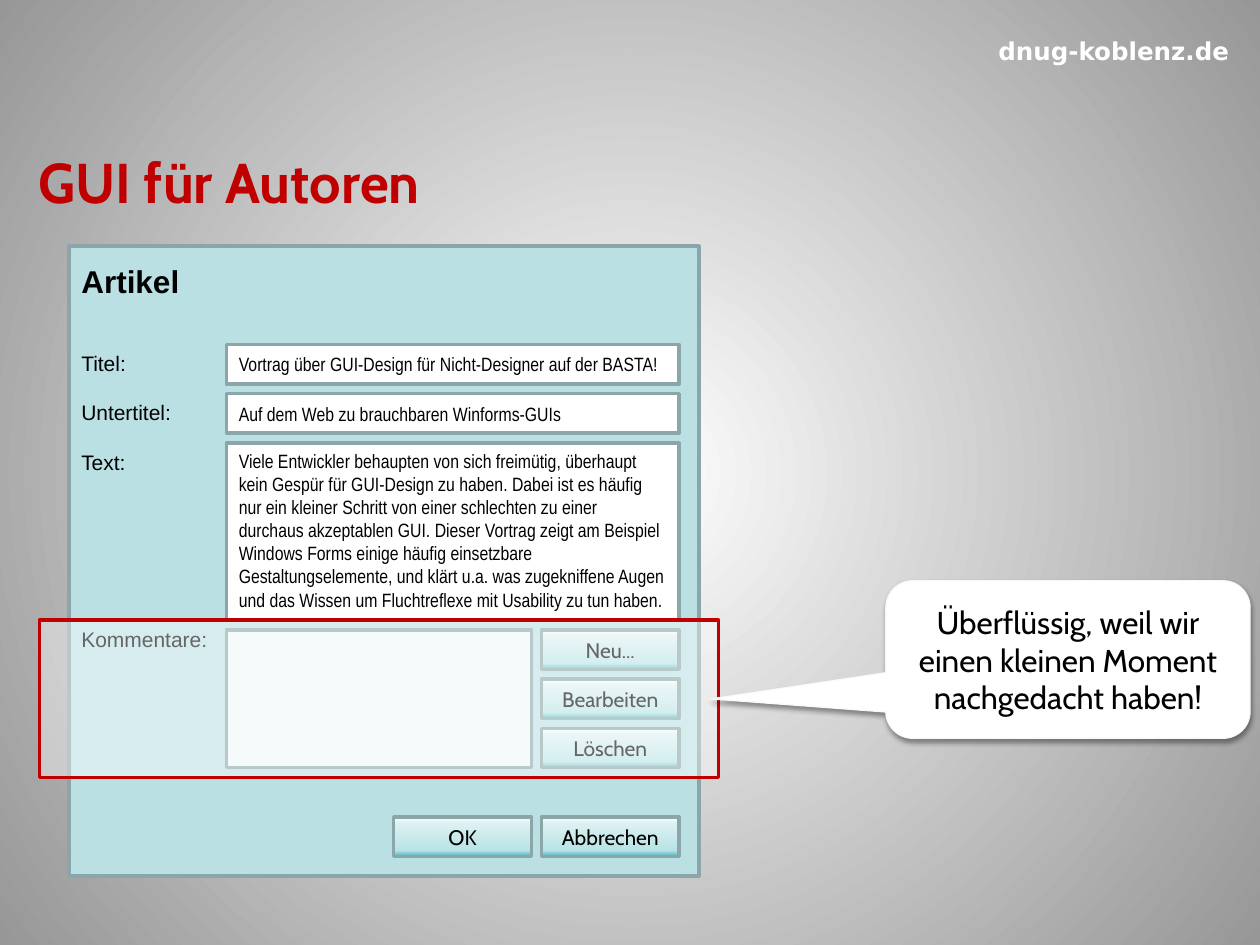
from lxml import etree
from pptx import Presentation, util as u
from pptx.dml.color import RGBColor
from pptx.enum import shapes, text
from pptx.oxml import parse_xml
from pptx.oxml.ns import nsdecls, qn

C = {"red": "C00000", "white": "FFFFFF", "black": "000000", "grey": "979797",
     "panel": "BBE0E3", "edge": "8AA6A8", "pale": "EFF9F9", "rim": "F9F9F9",
     "ice": "DEF1F2", "aqua": "B8E3E6", "teal": "50B8C0", "shade": "5F5F5F"}
LINEAR = '<a:lin ang="5400000" scaled="0"/>'
RADIAL = '<a:path path="circle"><a:fillToRect l="50000" t="50000" r="50000" b="50000"/></a:path>'
BUTTON = [(0, "white"), (15, "ice"), (85, "aqua"), (100, "teal")]


def put_text(sp, words, font="Arial", size=12, color="black", bold=False,
             align="LEFT", anchor="TOP"):
    tf = sp.text_frame
    tf.word_wrap = True
    tf.auto_size = text.MSO_AUTO_SIZE.NONE
    tf.vertical_anchor = getattr(text.MSO_ANCHOR, anchor)
    p = tf.paragraphs[0]
    p.text = words
    p.alignment = getattr(text.PP_ALIGN, align)
    for r in p.runs:
        r.font.name, r.font.size, r.font.bold = font, u.Pt(size), bold
        r.font.color.rgb = RGBColor.from_string(C[color])


def put_gradient(props, stops, direction):
    gs = "".join(f'<a:gs pos="{pos * 1000}"><a:srgbClr val="{C[c]}"/></a:gs>' for pos, c in stops)
    grad = parse_xml(f'<a:gradFill {nsdecls("a")} rotWithShape="1">'
                     f'<a:gsLst>{gs}</a:gsLst>{direction}</a:gradFill>')
    props.replace(props.find(qn("a:solidFill")), grad)


prs = Presentation()
prs.slide_width, prs.slide_height = u.Inches(10), u.Inches(7.5)
g = prs.slide_width // 128
s = prs.slides.add_slide(prs.slide_layouts[5])
s.background.fill.solid()
put_gradient(s._element.find(".//" + qn("p:bgPr")), [(0, "white"), (100, "grey")], RADIAL)

sp = s.shapes.add_textbox(98.3 * g, 2.7 * g, 29.7 * g, 5 * g)
put_text(sp, "dnug-koblenz.de", font="DejaVu Sans", size=14, color="white", bold=True,
         align="CENTER", anchor="MIDDLE")

sp = s.shapes.title
sp.left, sp.top, sp.width, sp.height = [int(n * g) for n in (2.6, 11.7, 123, 13.3)]
put_text(sp, "GUI für Autoren", font="Cabin", size=32, color="red", bold=True, anchor="MIDDLE")
rpr = sp._element.find(".//" + qn("a:rPr"))
rpr.find(qn("a:solidFill")).addnext(parse_xml(
    f'<a:effectLst {nsdecls("a")}><a:outerShdw dist="25400" dir="2700000">'
    f'<a:srgbClr val="{C["shade"]}"/></a:outerShdw></a:effectLst>'))

form = s.shapes.add_group_shape().shapes
boxes = [
    (7, 25, 64, 64, "panel", "", {}),
    (23, 35, 46, 4, "white", "Vortrag über GUI-Design für Nicht-Designer auf der BASTA!", {"anchor": "MIDDLE"}),
    (23, 40, 46, 4, "white", "Auf dem Web zu brauchbaren Winforms-GUIs", {"anchor": "MIDDLE"}),
    (23, 45, 46, 18, "white",
     "Viele Entwickler behaupten von sich freimütig, überhaupt kein Gespür für GUI-Design zu haben. "
     "Dabei ist es häufig nur ein kleiner Schritt von einer schlechten zu einer durchaus akzeptablen GUI. "
     "Dieser Vortrag zeigt am Beispiel Windows Forms einige häufig einsetzbare Gestaltungselemente, "
     "und klärt u.a. was zugekniffene Augen und das Wissen um Fluchtreflexe mit Usability zu tun haben.", {}),
    (23, 64, 31, 14, "pale", "", {}),
]
for col, row, cols, rows, color, words, style in boxes:
    sp = form.add_shape(shapes.MSO_SHAPE.RECTANGLE, col * g, row * g, cols * g, rows * g)
    sp.shadow.inherit = False
    sp.fill.solid()
    sp.fill.fore_color.rgb = RGBColor.from_string(C[color])
    sp.line.color.rgb = RGBColor.from_string(C["edge"])
    sp.line.width = u.Pt(2)
    if words:
        put_text(sp, words, font="Arial Narrow", size=11, **style)

labels = [(26, 38, "Artikel", {"size": 18, "bold": True}), (35, 10, "Titel:", {}),
          (40, 13, "Untertitel:", {}), (45, 10, "Text:", {}), (63, 16, "Kommentare:", {})]
for row, cols, words, style in labels:
    put_text(form.add_textbox(7 * g, row * g, cols * g, 4 * g), words, **style)

buttons = [(55, 64, "Neu..."), (55, 69, "Bearbeiten"), (55, 74, "Löschen"),
           (40, 83, "OK"), (55, 83, "Abbrechen")]
for col, row, words in buttons:
    sp = form.add_shape(shapes.MSO_SHAPE.RECTANGLE, col * g, row * g, 14 * g, 4 * g)
    sp.shadow.inherit = False
    sp.fill.solid()
    put_gradient(sp._element.spPr, BUTTON, LINEAR)
    sp.line.color.rgb = RGBColor.from_string(C["edge"])
    sp.line.width = u.Pt(2)
    put_text(sp, words, font="Cabin", align="CENTER", anchor="MIDDLE")

veil = s.shapes.add_shape(shapes.MSO_SHAPE.RECTANGLE, 4 * g, 63 * g, 69 * g, 16 * g)
note = s.shapes.add_shape(shapes.MSO_SHAPE.ROUNDED_RECTANGULAR_CALLOUT, 90 * g, 59 * g, 37 * g, 16 * g)
for sp, edge, width in [(veil, "red", 2), (note, "rim", 0.75)]:
    sp.shadow.inherit = False
    sp.fill.solid()
    sp.fill.fore_color.rgb = RGBColor.from_string(C["white"])
    sp.line.color.rgb = RGBColor.from_string(C[edge])
    sp.line.width = u.Pt(width)

clr = veil._element.spPr.find(qn("a:solidFill"))[0]
etree.SubElement(clr, qn("a:alpha")).set("val", "40000")

for i, value in enumerate([-0.98, 0.25, 0.17]):
    note.adjustments[i] = value
note._element.spPr.find(qn("a:effectLst")).append(parse_xml(
    f'<a:outerShdw {nsdecls("a")} blurRad="{u.Pt(3.1)}" dist="{u.Pt(1.6)}" dir="5400000" rotWithShape="0">'
    f'<a:srgbClr val="{C["black"]}"><a:alpha val="38000"/></a:srgbClr></a:outerShdw>'))
put_text(note, "Überflüssig, weil wir einen kleinen Moment\nnachgedacht haben!", font="Cabin", size=18,
         align="CENTER", anchor="MIDDLE")

prs.save("out.pptx")
